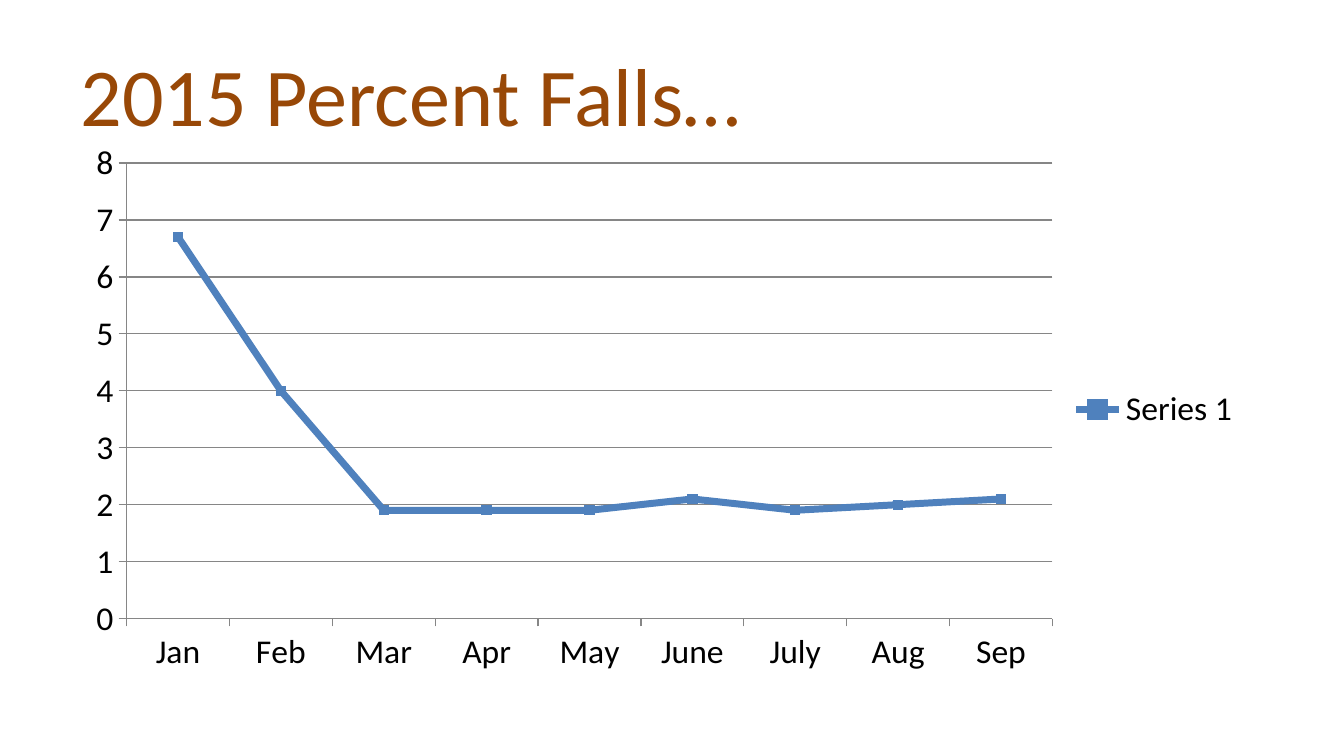
from lxml.etree import SubElement
from pptx import Presentation
from pptx.chart.data import CategoryChartData
from pptx.dml.color import RGBColor
from pptx.enum.chart import XL_CHART_TYPE, XL_LEGEND_POSITION, XL_MARKER_STYLE, XL_TICK_MARK
from pptx.enum.text import MSO_ANCHOR, PP_ALIGN
from pptx.oxml.ns import qn
from pptx.util import Pt


def color(hex_value):
    """Turn a hex string into a colour."""
    return RGBColor.from_string(hex_value)


class SlideBuilder:
    """Hold the style and the current slide."""

    font_name = "Calibri"
    title_color = "984807"
    text_color = "000000"
    series_color = "4F81BD"
    grid_color = "868686"

    def __init__(self, slide):
        """Start on a slide."""
        self.slide = slide

    def set_font(self, font, size, hex_value):
        """Apply the typeface, size and colour."""
        font.name = self.font_name
        font.size = Pt(size)
        font.color.rgb = color(hex_value)

    def add_title(self, wording, left, top, width, height):
        """Place and format the title."""
        title = self.slide.shapes.title
        title.left, title.top, title.width, title.height = map(Pt, (left, top, width, height))
        title.text_frame.text = wording
        title.text_frame.vertical_anchor = MSO_ANCHOR.MIDDLE
        heading = title.text_frame.paragraphs[0]
        heading.alignment = PP_ALIGN.LEFT
        self.set_font(heading.font, 44, self.title_color)

    def style_line(self, line, hex_value, width):
        """Set the colour and width of a line."""
        line.color.rgb = color(hex_value)
        line.width = Pt(width)

    def add_line_chart(self, months, name, rates, box, plot_area):
        """Add a line chart with markers and a legend on the right."""
        data = CategoryChartData()
        data.categories = months
        data.add_series(name, rates)
        chart = self.slide.shapes.add_chart(
            XL_CHART_TYPE.LINE_MARKERS, *map(Pt, box), data).chart
        chart.has_title = False
        self.set_font(chart.font, 18, self.text_color)
        chart.has_legend = True
        chart.legend.position = XL_LEGEND_POSITION.RIGHT
        chart.legend.include_in_layout = False

        for axis in (chart.category_axis, chart.value_axis):
            axis.major_tick_mark = XL_TICK_MARK.OUTSIDE
            axis.minor_tick_mark = XL_TICK_MARK.NONE
            self.style_line(axis.format.line, self.grid_color, 0.75)
        rate_axis = chart.value_axis
        rate_axis.minimum_scale, rate_axis.maximum_scale, rate_axis.major_unit = 0, 8, 1
        rate_axis.has_major_gridlines = True
        self.style_line(rate_axis.major_gridlines.format.line, self.grid_color, 0.75)

        chart.plots[0].vary_by_categories = False
        falls = chart.plots[0].series[0]
        falls.smooth = False
        self.style_line(falls.format.line, self.series_color, 3.75)
        falls.marker.style = XL_MARKER_STYLE.SQUARE
        falls.marker.size = 5
        falls.marker.format.fill.solid()
        falls.marker.format.fill.fore_color.rgb = color(self.series_color)
        self.style_line(falls.marker.format.line, self.series_color, 0.75)
        self.set_plot_area(chart, plot_area)

    def set_plot_area(self, chart, fractions):
        """Fix the inner plot area as fractions of the chart."""
        plot = chart.element.find(".//" + qn("c:plotArea"))
        layout = plot.find(qn("c:layout"))
        if layout is None:
            layout = SubElement(plot, qn("c:layout"))
            plot.insert(0, layout)
        manual = SubElement(layout, qn("c:manualLayout"))
        settings = [("layoutTarget", "inner"), ("xMode", "edge"), ("yMode", "edge"),
                    *zip("xywh", fractions)]
        for tag, value in settings:
            SubElement(manual, qn(f"c:{tag}")).set("val", str(value))


def main():
    """Build and save the falls slide."""
    deck = Presentation()
    deck.slide_width, deck.slide_height = Pt(720), Pt(405)
    builder = SlideBuilder(deck.slides.add_slide(deck.slide_layouts[5]))
    builder.add_title("2015 Percent Falls…", 36, 16.5, 648, 67.5)
    builder.add_line_chart(
        ["Jan", "Feb", "Mar", "Apr", "May", "June", "July", "Aug", "Sep"],
        "Series 1",
        [6.7, 4, 1.9, 1.9, 1.9, 2.1, 1.9, 2, 2.1],
        box=(36, 76.5, 636, 283.5),
        plot_area=(0.05, 0.03, 0.78, 0.87),
    )
    deck.save("out.pptx")


if __name__ == "__main__":
    main()
